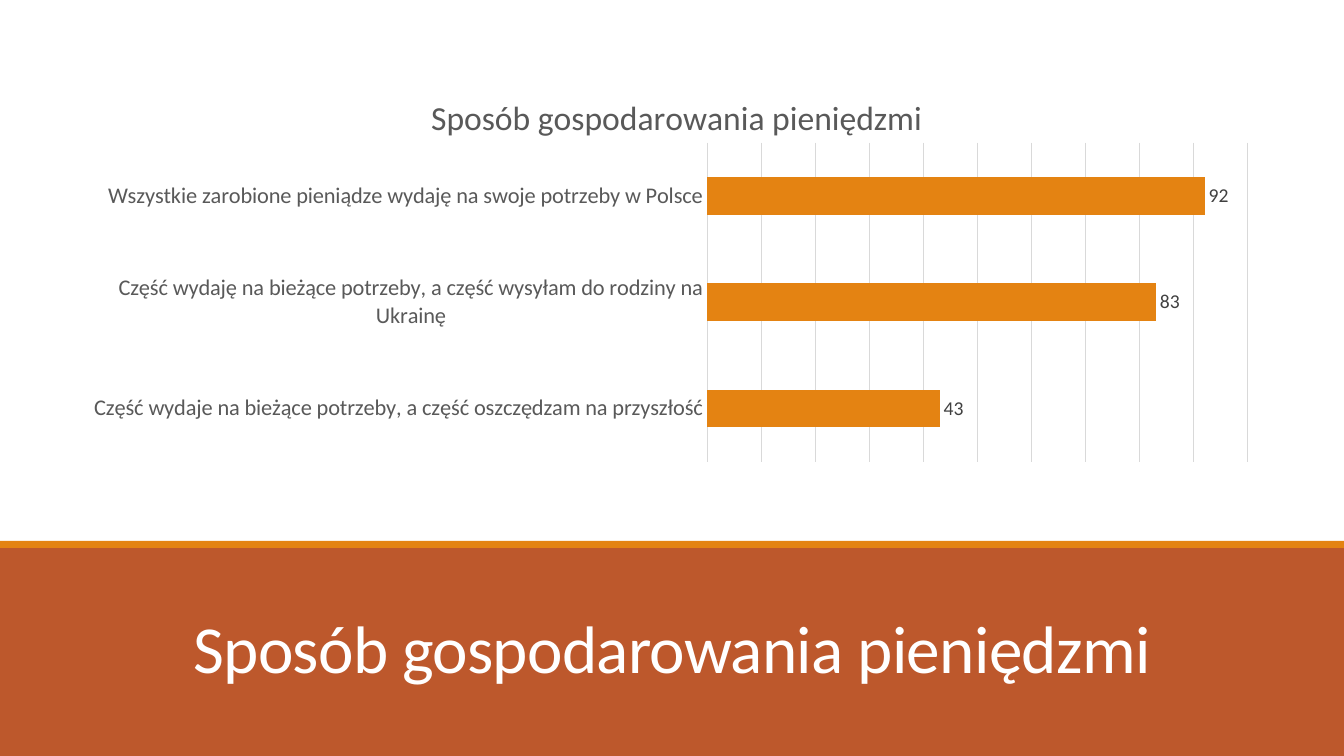
import pptx
import pptx.chart.data
import pptx.dml.color
import pptx.enum.chart
import pptx.enum.shapes
import pptx.enum.text
import pptx.oxml
import pptx.oxml.ns
import pptx.util

Pt = pptx.util.Pt
FONT = "Calibri"
HEAD = "Sposób gospodarowania pieniędzmi"
COLORS = {"rust": "BD582C", "amber": "E48312", "white": "FFFFFF",
          "grid": "D9D9D9", "text": "595959", "label": "404040"}
ANSWERS = {
    "Część wydaje na bieżące potrzeby, a część oszczędzam na przyszłość": 43,
    "Część wydaję na bieżące potrzeby, a część wysyłam do rodziny na Ukrainę": 83,
    "Wszystkie zarobione pieniądze wydaję na swoje potrzeby w Polsce": 92,
}


def rgb(name):
    return pptx.dml.color.RGBColor.from_string(COLORS[name])


def style(font, size, color):
    font.name, font.size, font.bold = FONT, Pt(size), False
    font.color.rgb = rgb(color)


def line(fmt, color):
    fmt.color.rgb = rgb(color)
    fmt.width = Pt(0.75)


def layout(**parts):
    """Manual chart layout, in fractions of the chart box."""
    tags = "".join(f'<c:{tag} val="{val}"/>' for tag, val in parts.items())
    space = pptx.oxml.ns.nsdecls("c")
    return pptx.oxml.parse_xml(
        f"<c:layout {space}><c:manualLayout>{tags}</c:manualLayout></c:layout>")


def put_layout(parent, new, after=None):
    for old in parent.findall(pptx.oxml.ns.qn("c:layout")):
        parent.remove(old)
    if after is None:
        parent.insert(0, new)
    else:
        after.addnext(new)


def add_bar(slide, x, y, w, h, color):
    bar = slide.shapes.add_shape(
        pptx.enum.shapes.MSO_SHAPE.RECTANGLE, Pt(x), Pt(y), Pt(w), Pt(h))
    bar.shadow.inherit = False
    bar.fill.solid()
    bar.fill.fore_color.rgb = rgb(color)
    bar.line.fill.background()


def add_band(slide, x, y, w, h):
    # Coloured band with its top rule
    add_bar(slide, x, y, w, h, "rust")
    add_bar(slide, x, y - 3.6, w, 5, "amber")

    # Slide title, brought in front of the band
    title = slide.shapes.title
    title.left, title.top = Pt(x + 84), Pt(y + 23)
    title.width, title.height = Pt(w - 168), Pt(81.5)
    slide.shapes._spTree.append(title._element)
    frame = title.text_frame
    frame.text = HEAD
    frame.word_wrap = True
    frame.auto_size = pptx.enum.text.MSO_AUTO_SIZE.NONE
    frame.vertical_anchor = pptx.enum.text.MSO_ANCHOR.BOTTOM
    para = frame.paragraphs[0]
    para.alignment = pptx.enum.text.PP_ALIGN.CENTER
    para.line_spacing = 0.85
    style(para.font, 48, "white")
    para.runs[0].font._element.set("spc", "-50")


def add_answers(slide, x, y, w, h):
    data = pptx.chart.data.CategoryChartData(number_format="0")
    data.categories = list(ANSWERS)
    data.add_series("Odpowiedzi", list(ANSWERS.values()))
    chart = slide.shapes.add_chart(
        pptx.enum.chart.XL_CHART_TYPE.BAR_CLUSTERED,
        Pt(x), Pt(y), Pt(w), Pt(h), data).chart
    chart.font.name, chart.font.size = FONT, Pt(10)
    chart.has_legend = False

    # Chart title
    chart.has_title = True
    head = chart.chart_title
    head.text_frame.text = HEAD
    style(head.text_frame.paragraphs[0].font, 24, "text")
    put_layout(head._element, layout(xMode="edge", yMode="edge", x=0.295, y=0.045),
               head._element.find(pptx.oxml.ns.qn("c:tx")))

    # Axes
    ticks = pptx.enum.chart.XL_TICK_MARK.NONE
    cats = chart.category_axis
    cats.major_tick_mark = cats.minor_tick_mark = ticks
    style(cats.tick_labels.font, 16, "text")
    line(cats.format.line, "grid")
    vals = chart.value_axis
    vals.visible = False
    vals.minimum_scale, vals.maximum_scale, vals.major_unit = 0, 100, 10
    vals.has_major_gridlines = True
    line(vals.major_gridlines.format.line, "grid")

    # Bars and their values
    plot = chart.plots[0]
    plot.gap_width = 182
    plot.vary_by_categories = False
    fill = plot.series[0].format.fill
    fill.solid()
    fill.fore_color.rgb = rgb("amber")
    plot.has_data_labels = True
    labels = plot.data_labels
    labels.show_value = True
    labels.number_format, labels.number_format_is_linked = "0", False
    labels.position = pptx.enum.chart.XL_LABEL_POSITION.OUTSIDE_END
    style(labels.font, 14, "label")
    area = chart._chartSpace.chart.plotArea
    put_layout(area, layout(layoutTarget="inner", xMode="edge", yMode="edge",
                            x=0.53, y=0.18, w=0.45, h=0.8))


def main():
    deck = pptx.Presentation()
    deck.slide_width, deck.slide_height = Pt(960), Pt(540)
    slide = deck.slides.add_slide(deck.slide_layouts[5])
    add_band(slide, 0, 390, 960, 150)
    add_answers(slide, 50.5, 50.5, 858, 285)
    deck.save("out.pptx")


if __name__ == "__main__":
    main()
